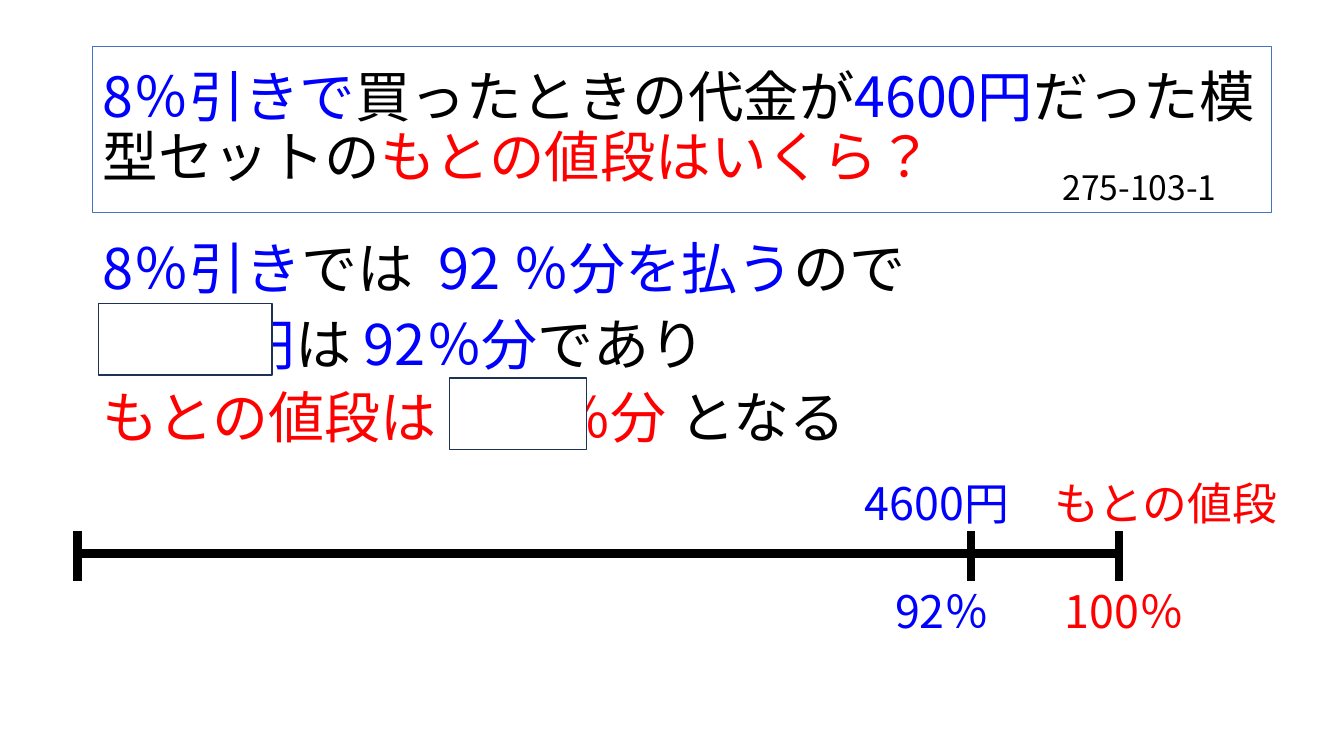
"""Builds a slide that finds the price before a discount with a number line."""
from typing import NamedTuple

from lxml.etree import SubElement
from pptx import Presentation
from pptx.dml.color import RGBColor
from pptx.enum.lang import MSO_LANGUAGE_ID
from pptx.enum.shapes import MSO_CONNECTOR, MSO_SHAPE
from pptx.enum.text import MSO_ANCHOR, MSO_AUTO_SIZE, PP_ALIGN
from pptx.oxml.ns import qn
from pptx.util import Inches, Pt

FONT = "Noto Sans CJK JP"
BLACK, BLUE, RED, WHITE = "000000", "0000FF", "FF0000", "FFFFFF"
FRAME_BLUE, COVER_NAVY = "4472C4", "1E3256"
LEFT = 0.92


class Run(NamedTuple):
    text: str
    color: str = BLACK


class Box(NamedTuple):
    left: float
    top: float
    width: float
    height: float

    def lengths(self):
        return [Inches(value) for value in self]


class Statement(NamedTuple):
    box: Box
    runs: list[Run]


class PriceLabel(NamedTuple):
    box: Box
    price: str
    percent: str
    color: str
    indent: float


QUESTION = [Run("8％引きで", BLUE), Run("買ったときの代金が"), Run("4600円", BLUE),
            Run("だった模型セットの"), Run("もとの値段はいくら？", RED)]
STATEMENTS = [
    Statement(Box(LEFT, 2.27, 8.78, 0.77),
              [Run("8％引き", BLUE), Run("では  "), Run("92 ％分を払う", BLUE), Run("ので")]),
    Statement(Box(LEFT, 3.02, 6.89, 0.77),
              [Run("4600 円", BLUE), Run("は "), Run("92％分", BLUE), Run("であり")]),
    Statement(Box(LEFT, 3.75, 8.08, 0.77),
              [Run("もとの値段は 100 ％分 ", RED), Run("となる")]),
]
PRICE_LABELS = [
    PriceLabel(Box(10.36, 4.67, 2.6, 1.72), "もとの値段", "100％", RED, 0.1),
    PriceLabel(Box(8.48, 4.67, 1.96, 1.72), "4600円", "92％", BLUE, 0.3),
]
ANSWER_COVERS = [Box(0.98, 3.01, 1.72, 0.71), Box(4.46, 3.75, 1.36, 0.71)]
START, DISCOUNTED, FULL = 0.77, 9.63, 11.1
AXIS_Y, TICK_TOP, TICK_BOTTOM = 5.49, 5.27, 5.76


def rgb(color: str) -> RGBColor:
    return RGBColor.from_string(color)


def write(paragraph, runs: list[Run], *, size: float, indent: float = 0,
          before: float = 0, spacing: float = 1.0) -> None:
    paragraph.alignment = PP_ALIGN.LEFT
    paragraph.line_spacing = spacing
    paragraph.space_before = Pt(before)
    if indent:
        paragraph._p.get_or_add_pPr().set("marL", str(Inches(indent)))
    for text, color in runs:
        run = paragraph.add_run()
        run.text = text
        run.font.name = FONT
        run.font.size = Pt(size)
        run.font.language_id = MSO_LANGUAGE_ID.JAPANESE
        run.font.color.rgb = rgb(color)
        SubElement(run.font._element, qn("a:ea"), typeface=FONT)


def add_frame(slide, box: Box):
    frame = slide.shapes.add_textbox(*box.lengths()).text_frame
    frame.word_wrap = True
    return frame


def add_question(slide) -> None:
    title = slide.shapes.title
    title.left, title.top, title.width, title.height = Box(LEFT, 0.46, 11.69, 1.65).lengths()
    title.line.color.rgb = rgb(FRAME_BLUE)
    title.line.width = Pt(0.75)
    title.text_frame.auto_size = MSO_AUTO_SIZE.NONE
    title.text_frame.vertical_anchor = MSO_ANCHOR.MIDDLE
    write(title.text_frame.paragraphs[0], QUESTION, size=39.6, spacing=0.9)


def add_price_label(slide, label: PriceLabel) -> None:
    frame = add_frame(slide, label.box)
    write(frame.paragraphs[0], [Run(label.price, label.color)], size=32)
    write(frame.add_paragraph(), [Run(label.percent, label.color)],
          size=32, indent=label.indent, before=38.5)


def add_number_line(slide) -> None:
    group = slide.shapes.add_group_shape()
    ticks = [(x, TICK_TOP, x, TICK_BOTTOM) for x in (FULL, START, DISCOUNTED)]
    for ends in [(START, AXIS_Y, FULL, AXIS_Y), *ticks]:
        stroke = group.shapes.add_connector(MSO_CONNECTOR.STRAIGHT, *map(Inches, ends))
        stroke.line.color.rgb = rgb(BLACK)
        stroke.line.width = Pt(6)
        SubElement(stroke._element.spPr, qn("a:effectLst"))


def add_cover(slide, box: Box) -> None:
    cover = slide.shapes.add_shape(MSO_SHAPE.RECTANGLE, *box.lengths())
    cover.shadow.inherit = False
    cover.fill.solid()
    cover.fill.fore_color.rgb = rgb(WHITE)
    cover.line.color.rgb = rgb(COVER_NAVY)
    cover.line.width = Pt(1)


def main() -> None:
    deck = Presentation()
    deck.slide_width, deck.slide_height = Inches(13.33), Inches(7.5)
    slide = deck.slides.add_slide(deck.slide_layouts.get_by_name("Title Only"))
    add_question(slide)
    for statement in STATEMENTS:
        write(add_frame(slide, statement.box).paragraphs[0], statement.runs, size=40)
    for label in PRICE_LABELS:
        add_price_label(slide, label)
    add_number_line(slide)
    problem_number = add_frame(slide, Box(10.44, 1.61, 2.31, 0.5))
    write(problem_number.paragraphs[0], [Run("275-103-1")], size=24)
    for cover in ANSWER_COVERS:
        add_cover(slide, cover)
    deck.save("out.pptx")


if __name__ == "__main__":
    main()
